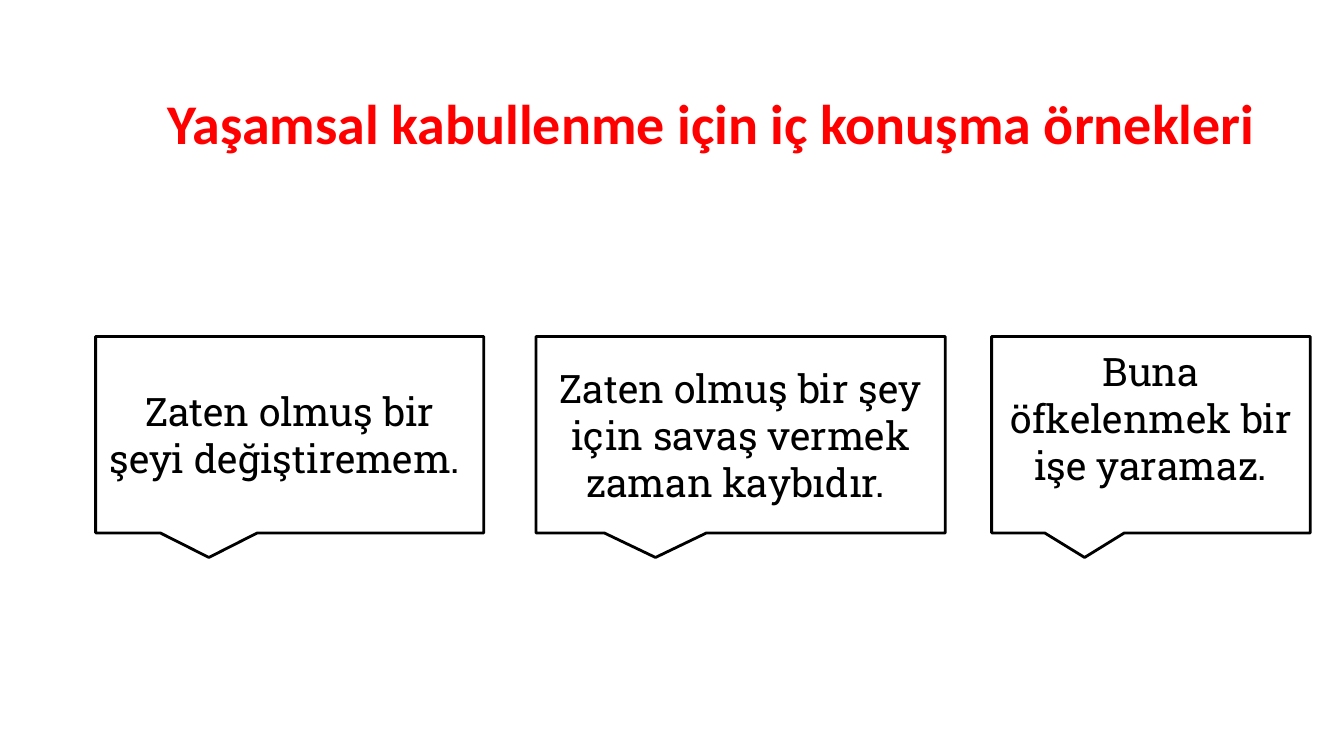
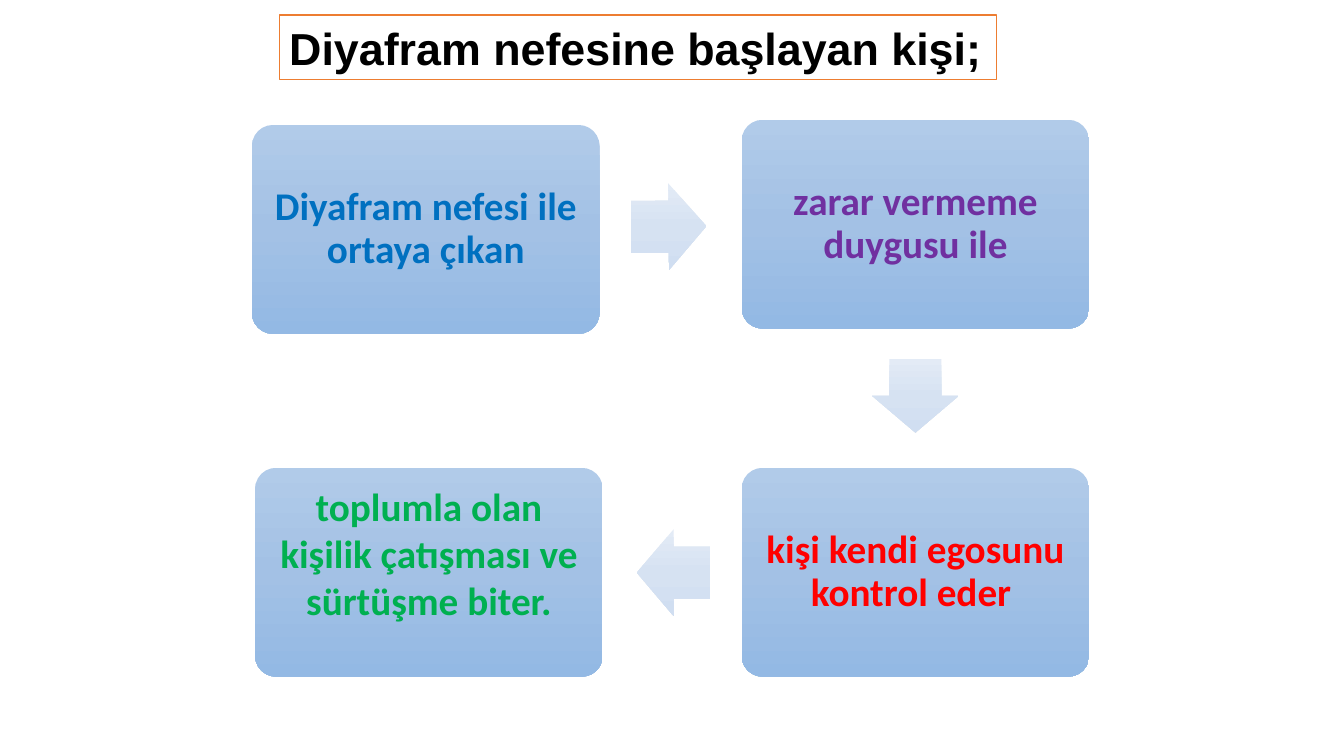
import copy

import pptx
import pptx.dml.color
import pptx.enum.shapes
import pptx.enum.text
import pptx.oxml.ns
import pptx.util

Cm, Pt = pptx.util.Cm, pptx.util.Pt
SHAPE = pptx.enum.shapes.MSO_SHAPE
ALIGN = pptx.enum.text.PP_ALIGN
ANCHOR = pptx.enum.text.MSO_ANCHOR

# Shared look
WHITE, BLACK, RED, ORANGE = "FFFFFF", "000000", "FF0000", "ED7D31"
BLUE, PURPLE, GREEN = "0070C0", "7030A0", "00B050"
STEP_GRADIENT = ("B1CBE9", "A3C1E5", "93B9E4")
ARROW_GRADIENT = ("E3EBF6", "D6E2F2", "D0DEF1")
PLAIN_INSETS = (0.25, 0.13, 0.25, 0.13)
STEP_INSETS = (0.3, 0.3, 0.3, 0.3)


def colour(hex_text):
    return pptx.dml.color.RGBColor.from_string(hex_text)


def write(box, text, font, size, text_colour, bold=False, align=ALIGN.CENTER,
          anchor=ANCHOR.MIDDLE, insets=PLAIN_INSETS, spacing=1.0, wrap=True):
    frame = box.text_frame
    frame.word_wrap = wrap
    frame.vertical_anchor = anchor
    (frame.margin_left, frame.margin_top,
     frame.margin_right, frame.margin_bottom) = map(Cm, insets)
    para = frame.paragraphs[0]
    para.alignment = align
    para.line_spacing = spacing
    span = para.add_run()
    span.text = text
    span.font.name = font
    span.font.size = Pt(size)
    span.font.bold = bold
    span.font.color.rgb = colour(text_colour)


def add_shape(page, kind, place, adjustments=()):
    shape = page.shapes.add_shape(kind, *map(Cm, place))
    shape.shadow.inherit = False
    for index, value in enumerate(adjustments):
        shape.adjustments[index] = value
    return shape


def outline(shape, line_colour, width):
    shape.fill.solid()
    shape.fill.fore_color.rgb = colour(WHITE)
    shape.line.color.rgb = colour(line_colour)
    shape.line.width = Pt(width)


def shade(shape, colours):
    """Three-stop gradient running from top to bottom, without an outline."""
    shape.line.fill.background()
    shape.fill.gradient()
    shape.fill.gradient_angle = 270
    gradient = shape._element.spPr.find(pptx.oxml.ns.qn("a:gradFill"))
    gradient.set("rotWithShape", "0")
    first = gradient[0][0]
    first.addnext(copy.deepcopy(first))
    for index, (stop, hex_text) in enumerate(zip(shape.fill.gradient_stops, colours)):
        stop.position = index / 2
        stop.color.rgb = colour(hex_text)


def add_callout(page, left, width, text, insets=PLAIN_INSETS):
    callout = add_shape(page, SHAPE.ROUNDED_RECTANGULAR_CALLOUT,
                        (left, 8.48, width, 4.95), (-0.208, 0.625, 0))
    outline(callout, BLACK, 2)
    write(callout, text, "Roboto Slab", 28, BLACK, insets=insets)


def add_step(page, left, top, text, text_colour, insets=STEP_INSETS, spacing=0.9):
    step = add_shape(page, SHAPE.ROUNDED_RECTANGLE, (left, top, 8.76, 5.26), (0.1,))
    shade(step, STEP_GRADIENT)
    write(step, text, "Calibri", 28, text_colour, bold=True,
          insets=insets, spacing=spacing)


def add_arrow(page, kind, place, rotation=0):
    arrow = add_shape(page, kind, place, (0.6, 0.5))
    arrow.rotation = rotation
    shade(arrow, ARROW_GRADIENT)


def build_self_talk(page):
    title = page.shapes.add_textbox(Cm(1.98), Cm(2.29), Cm(31.88), Cm(3.18))
    write(title, "Yaşamsal kabullenme için iç konuşma örnekleri", "Calibri", 40, RED,
          bold=True, anchor=ANCHOR.TOP, spacing=0.9)
    add_callout(page, 2.41, 9.78, "Zaten olmuş bir şeyi değiştiremem. ")
    add_callout(page, 13.51, 10.31,
                "Zaten olmuş bir şey için savaş vermek zaman kaybıdır. ")
    # The last sentence sits above the middle
    add_callout(page, 24.99, 8.03, "Buna öfkelenmek bir işe yaramaz.",
                insets=(0.25, 0.13, 0.25, 0.98))


def build_breathing(page):
    # Steps, clockwise from the top left
    right, lower = 18.69, 11.79
    add_step(page, 6.35, 3.15, "Diyafram nefesi ile ortaya çıkan", BLUE)
    add_step(page, right, 3.02, "zarar vermeme duygusu ile", PURPLE)
    add_step(page, right, lower, "kişi kendi egosunu kontrol eder ", RED)
    add_step(page, 6.43, lower, "toplumla olan kişilik çatışması ve sürtüşme biter.",
             GREEN, insets=(0.3, 0, 0.3, 0.96), spacing=1.0)

    # Arrows between the steps
    add_arrow(page, SHAPE.RIGHT_ARROW, (15.9, 4.62, 1.9, 2.18), rotation=359.4)
    add_arrow(page, SHAPE.DOWN_ARROW, (21.98, 9.05, 2.18, 1.85))
    add_arrow(page, SHAPE.LEFT_ARROW, (16.05, 13.34, 1.85, 2.18))

    # Framed heading
    heading = add_shape(page, SHAPE.RECTANGLE, (7.04, 0.38, 18.08, 1.63))
    outline(heading, ORANGE, 1)
    write(heading, "Diyafram nefesine başlayan kişi;", "Arial", 32, BLACK, bold=True,
          align=ALIGN.LEFT, anchor=ANCHOR.TOP, wrap=False)


def main():
    deck = pptx.Presentation()
    deck.slide_width, deck.slide_height = Cm(33.87), Cm(19.05)
    for build in (build_self_talk, build_breathing):
        build(deck.slides.add_slide(deck.slide_layouts[6]))
    deck.save("out.pptx")


if __name__ == "__main__":
    main()
